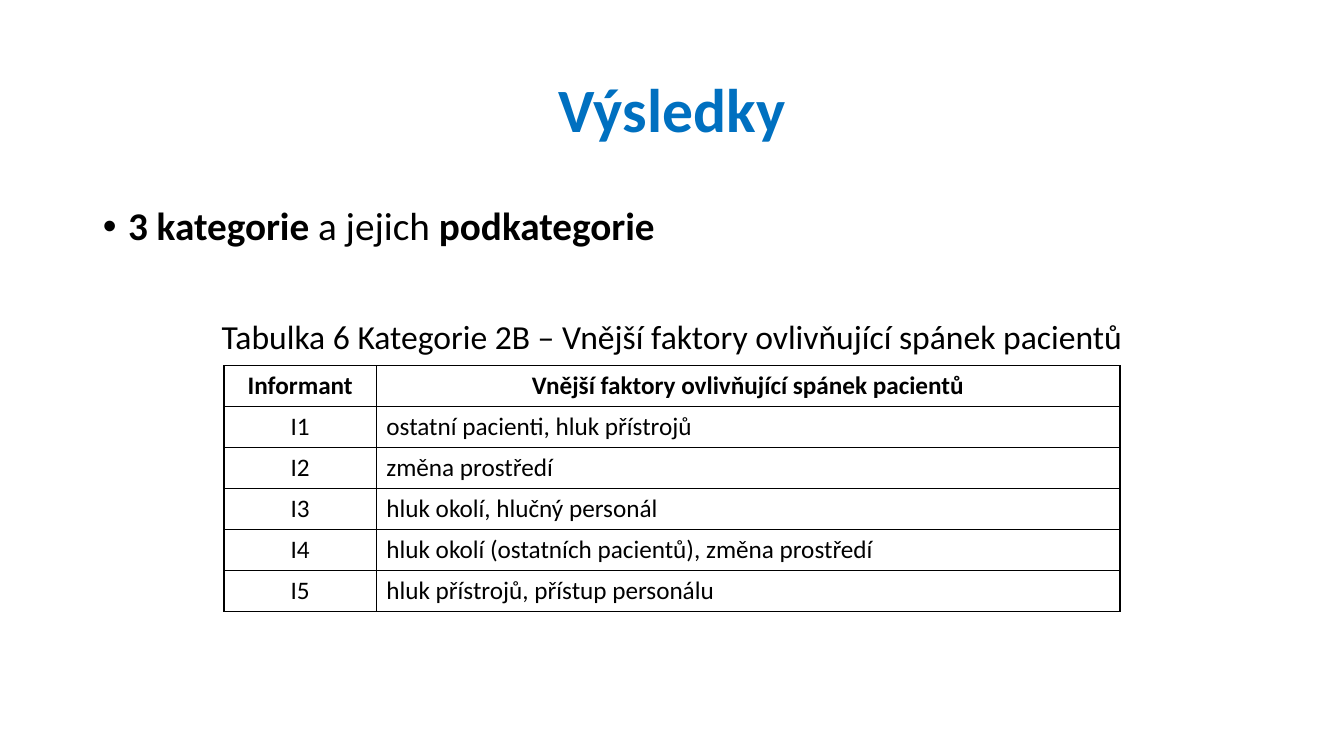
from dataclasses import dataclass

from lxml.etree import SubElement
from pptx import Presentation
from pptx.dml.color import RGBColor as RGB
from pptx.enum.text import MSO_ANCHOR as Anchor
from pptx.enum.text import MSO_AUTO_SIZE as AutoSize
from pptx.enum.text import PP_ALIGN as Align
from pptx.oxml.ns import qn
from pptx.util import Inches, Pt


@dataclass(frozen=True)
class Theme:
    font: str = "Calibri"
    heading: RGB = RGB(0x00, 0x70, 0xC0)
    ink: RGB = RGB(0, 0, 0)
    title_size: int = 44
    body_size: int = 28
    caption_size: int = 24
    table_size: int = 18
    line_spacing: float = 0.9
    outer_rule: float = 1
    inner_rule: float = 0.5


THEME = Theme()
SLIDE_W, SLIDE_H = Inches(13.33), Inches(7.5)
TITLE_AREA = (0.069, 0.053, 0.862, 0.193)
BODY_AREA = (0.069, 0.267, 0.862, 0.635)
TABLE_AREA = (1 / 6, 0.484, 2 / 3, 0.324)
INFORMANT_SHARE = 0.17

KEY_POINT = [("3 kategorie ", True), ("a jejich ", False), ("podkategorie", True)]
CAPTION = "Tabulka 6 Kategorie 2B – Vnější faktory ovlivňující spánek pacientů"
FACTORS = [
    ("Informant", "Vnější faktory ovlivňující spánek pacientů"),
    ("I1", "ostatní pacienti, hluk přístrojů"),
    ("I2", "změna prostředí"),
    ("I3", "hluk okolí, hlučný personál"),
    ("I4", "hluk okolí (ostatních pacientů), změna prostředí"),
    ("I5", "hluk přístrojů, přístup personálu"),
]


def to_lengths(area):
    return [int(share * side) for share, side in zip(area, (SLIDE_W, SLIDE_H) * 2)]


def place(placeholder, area):
    placeholder.left, placeholder.top, placeholder.width, placeholder.height = to_lengths(area)
    frame = placeholder.text_frame
    frame.word_wrap = True
    frame.auto_size = AutoSize.NONE
    return frame


def style_run(run, size, bold=False, color=THEME.ink):
    run.font.name = THEME.font
    run.font.size = Pt(size)
    run.font.bold = bold
    run.font.color.rgb = color


def set_bullet(paragraph, mark=None, indent=0):
    properties = paragraph._p.get_or_add_pPr()
    properties.set("marL", str(Inches(indent)))
    properties.set("indent", str(-Inches(indent)))
    if mark:
        SubElement(properties, qn("a:buFont"), typeface="Arial")
        SubElement(properties, qn("a:buChar"), char=mark)
    else:
        SubElement(properties, qn("a:buNone"))


def space(paragraph, before=0):
    paragraph.line_spacing = THEME.line_spacing
    paragraph.space_before = Pt(before)


def fill_title(placeholder):
    frame = place(placeholder, TITLE_AREA)
    frame.vertical_anchor = Anchor.MIDDLE
    frame.text = "Výsledky"
    heading = frame.paragraphs[0]
    heading.alignment = Align.CENTER
    space(heading)
    style_run(heading.runs[0], THEME.title_size, True, THEME.heading)


def fill_body(placeholder):
    frame = place(placeholder, BODY_AREA)
    frame.vertical_anchor = Anchor.TOP
    key_point = frame.paragraphs[0]
    set_bullet(key_point, "•", 0.25)
    space(key_point)
    for words, bold in KEY_POINT:
        run = key_point.add_run()
        run.text = words
        style_run(run, THEME.body_size, bold)

    caption = frame.add_paragraph()
    caption.text = CAPTION
    set_bullet(caption)
    caption.alignment = Align.CENTER
    space(caption, before=51)
    style_run(caption.runs[0], THEME.caption_size)


def set_borders(cell, outer_sides):
    properties = cell._tc.get_or_add_tcPr()
    for position, side in enumerate(("lnL", "lnR", "lnT", "lnB")):
        width = THEME.outer_rule if side in outer_sides else THEME.inner_rule
        line = properties.makeelement(qn(f"a:{side}"), {"w": str(Pt(width))})
        fill = SubElement(line, qn("a:solidFill"))
        SubElement(fill, qn("a:srgbClr"), val=str(THEME.ink))
        properties.insert(position, line)


def add_factor_table(slide):
    row_count, column_count = len(FACTORS), len(FACTORS[0])
    left, top, width, height = to_lengths(TABLE_AREA)
    table = slide.shapes.add_table(row_count, column_count, left, top, width, height).table
    table.first_row = table.horz_banding = False
    table.columns[0].width = int(width * INFORMANT_SHARE)
    table.columns[1].width = width - table.columns[0].width

    for row, entries in enumerate(FACTORS):
        is_header = row == 0
        for column, entry in enumerate(entries):
            cell = table.cell(row, column)
            cell.text = entry
            cell.fill.background()
            cell.vertical_anchor = Anchor.MIDDLE if is_header else Anchor.TOP
            paragraph = cell.text_frame.paragraphs[0]
            paragraph.alignment = Align.CENTER if is_header or column == 0 else Align.LEFT
            style_run(paragraph.runs[0], THEME.table_size, is_header)
            edges = {
                "lnL": column == 0,
                "lnR": column == column_count - 1,
                "lnT": is_header,
                "lnB": row == row_count - 1,
            }
            set_borders(cell, [side for side, is_outer in edges.items() if is_outer])


def main():
    deck = Presentation()
    deck.slide_width, deck.slide_height = SLIDE_W, SLIDE_H
    slide = deck.slides.add_slide(deck.slide_layouts[1])
    fill_title(slide.shapes.title)
    fill_body(slide.placeholders[1])
    add_factor_table(slide)
    deck.save("out.pptx")


if __name__ == "__main__":
    main()
